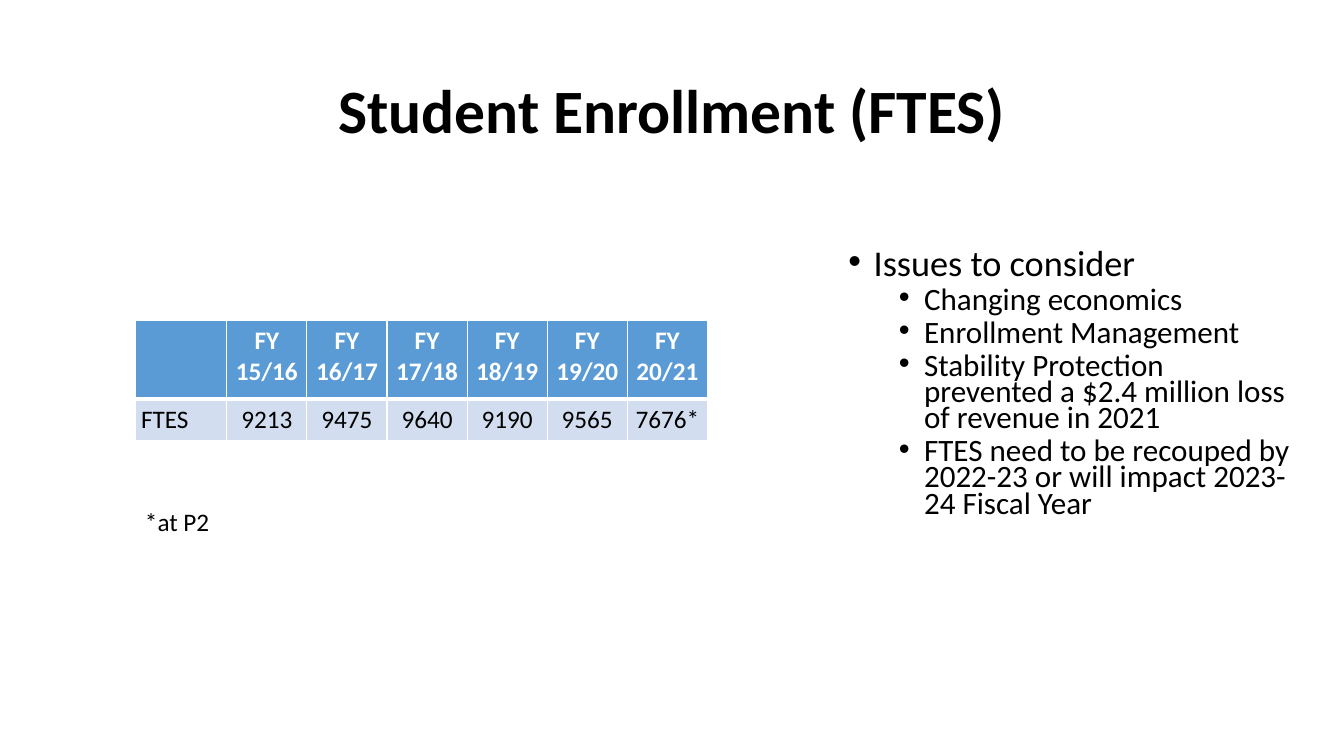
from pptx import Presentation
from pptx.dml.color import RGBColor
from pptx.enum.text import MSO_ANCHOR as Anchor, PP_ALIGN as Align
from pptx.oxml.ns import qn
from pptx.util import Pt
from lxml.etree import SubElement

PX = 4572  # EMU per px, 200 px to the inch
BLACK, WHITE, BLUE, PALE_BLUE = "000000", "FFFFFF", "5B9BD5", "D2DEEF"


def color(value):
    return RGBColor.from_string(value)


def write(frame, lines, size=18, fill=BLACK, bold=False, align=Align.LEFT,
          spacing=None, before=0, bullet_indent=None):
    """Add each line as a paragraph, filling an empty first paragraph first."""
    for line in lines:
        para = frame.paragraphs[-1]
        if para.runs:
            para = frame.add_paragraph()
        para.alignment = align
        para.line_spacing = spacing
        para.space_before = Pt(before)
        if bullet_indent is not None:
            props = para._p.get_or_add_pPr()
            props.set("marL", str(bullet_indent * PX))
            props.set("indent", str(-50 * PX))
            SubElement(props, qn("a:buFont"), typeface="Arial")
            SubElement(props, qn("a:buChar"), char="•")
        span = para.add_run()
        span.text = line
        span.font.name = "Calibri"
        span.font.size = Pt(size)
        span.font.bold = bold
        span.font.color.rgb = color(fill)


deck = Presentation()
deck.slide_width, deck.slide_height = 2667 * PX, 1500 * PX
page = deck.slides.add_slide(deck.slide_layouts[6])

# Text boxes
frames = []
for bounds in [(184, 80, 2300, 290), (1664, 490, 930, 610), (268, 994, 378, 80)]:
    box = page.shapes.add_textbox(*[length * PX for length in bounds])
    box.text_frame.word_wrap = True
    frames.append(box.text_frame)
title, issues, footnote = frames

# Title
title.vertical_anchor = Anchor.MIDDLE
write(title, ["Student Enrollment (FTES)"], size=44, bold=True,
      align=Align.CENTER, spacing=0.9)

# Enrollment table
header = [[], ["FY 15/16"], ["FY 16/17"], ["FY 17/18"],
          ["FY", "18/19"], ["FY", "19/20"], ["FY", "20/21"]]
counts = [["FTES"], ["9213"], ["9475"], ["9640"], ["9190"], ["9565"], ["7676*"]]
table = page.shapes.add_table(
    2, 7, 268 * PX, 636 * PX, 1136 * PX, 238 * PX).table
for index, column in enumerate(table.columns):
    column.width = (159 if index else 182) * PX
for row, height in zip(table.rows, (156, 82)):
    row.height = height * PX

for row_index, row in enumerate([header, counts]):
    is_header = row_index == 0
    thick_side = "lnB" if is_header else "lnT"
    for column_index, lines in enumerate(row):
        cell = table.cell(row_index, column_index)
        cell.margin_left = cell.margin_right = 12 * PX
        cell.margin_top = cell.margin_bottom = 10 * PX
        props = cell._tc.get_or_add_tcPr()
        for side in ("lnL", "lnR", "lnT", "lnB"):
            width = Pt(3 if side == thick_side else 1)
            border = SubElement(props, qn(f"a:{side}"), w=str(width))
            paint = SubElement(border, qn("a:solidFill"))
            SubElement(paint, qn("a:srgbClr"), val=WHITE)
        cell.fill.solid()
        cell.fill.fore_color.rgb = color(BLUE if is_header else PALE_BLUE)
        write(cell.text_frame, lines, fill=WHITE if is_header else BLACK,
              bold=is_header, align=Align.CENTER if column_index else Align.LEFT)

# Issues list
write(issues, ["Issues to consider"], size=25.9, spacing=0.7, before=10,
      bullet_indent=50)
write(issues, [
    "Changing economics",
    "Enrollment Management",
    "Stability Protection prevented a $2.4 million loss of revenue in 2021",
    "FTES need to be recouped by 2022-23 or will impact 2023-24 Fiscal Year",
], size=22.2, spacing=0.7, before=5, bullet_indent=150)

# Footnote
write(footnote, ["*at P2"])

deck.save("out.pptx")
